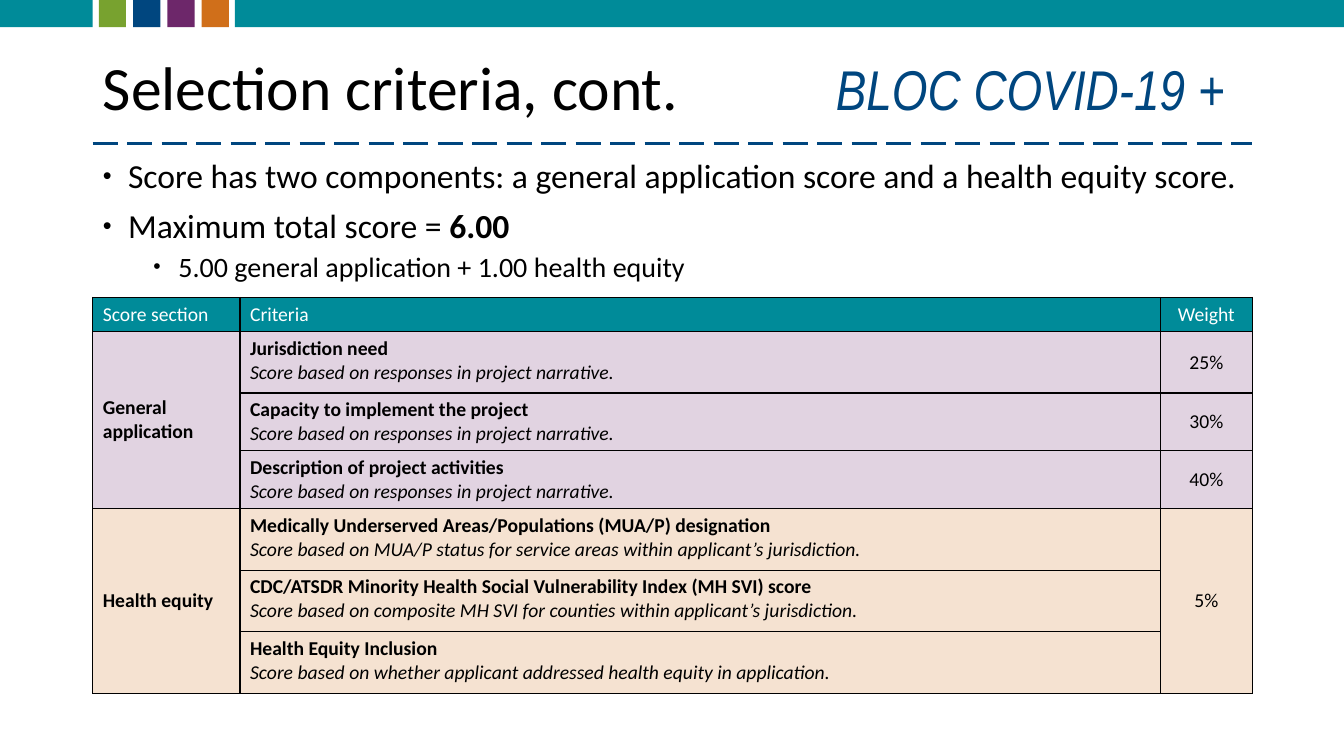
from lxml.etree import SubElement
from pptx import Presentation
from pptx.dml.color import RGBColor
from pptx.enum.dml import MSO_LINE
from pptx.enum.shapes import MSO_CONNECTOR, MSO_SHAPE
from pptx.enum.text import MSO_ANCHOR, MSO_AUTO_SIZE, PP_ALIGN
from pptx.oxml import parse_xml
from pptx.oxml.ns import nsdecls, qn
from pptx.util import Inches, Pt

TEAL = RGBColor(0x00, 0x8B, 0x99)
GREEN = RGBColor(0x78, 0xA2, 0x2F)
NAVY = RGBColor(0x00, 0x46, 0x7F)
PURPLE = RGBColor(0x6D, 0x27, 0x6A)
ORANGE = RGBColor(0xD0, 0x6F, 0x1A)
BLACK = RGBColor(0x00, 0x00, 0x00)
WHITE = RGBColor(0xFF, 0xFF, 0xFF)

LEFT, WIDTH = 0.92, 11.5
NARRATIVE = "Score based on responses in project narrative."
SECTIONS = [
    ("General application", PURPLE, [
        ("Jurisdiction need", NARRATIVE, "25%"),
        ("Capacity to implement the project", NARRATIVE, "30%"),
        ("Description of project activities", NARRATIVE, "40%"),
    ]),
    ("Health equity", ORANGE, [
        ("Medically Underserved Areas/Populations (MUA/P) designation",
         "Score based on MUA/P status for service areas within applicant’s jurisdiction.", "5%"),
        ("CDC/ATSDR Minority Health Social Vulnerability Index (MH SVI) score",
         "Score based on composite MH SVI for counties within applicant’s jurisdiction.", None),
        ("Health Equity Inclusion",
         "Score based on whether applicant addressed health equity in application.", None),
    ]),
]


class CriteriaSlide:
    font = "Calibri"
    table_size = 14

    def __init__(self, deck):
        self.slide = deck.slides.add_slide(deck.slide_layouts[1])
        self.shapes = self.slide.shapes

    def style(self, run, size, color=BLACK, bold=False, italic=False, font=None):
        run.font.name = font or self.font
        run.font.size = Pt(size)
        run.font.color.rgb = color
        run.font.bold = bold
        run.font.italic = italic

    def place(self, holder, top, height, anchor):
        holder.left, holder.top = Inches(LEFT), Inches(top)
        holder.width, holder.height = Inches(WIDTH), Inches(height)
        frame = holder.text_frame
        frame.word_wrap = True
        frame.auto_size = MSO_AUTO_SIZE.NONE
        frame.vertical_anchor = anchor
        return frame

    def band(self, left, width, color):
        block = self.shapes.add_shape(
            MSO_SHAPE.RECTANGLE, Inches(left), 0, Inches(width), Inches(0.27))
        block.shadow.inherit = False
        block.fill.solid()
        block.fill.fore_color.rgb = color
        block.line.fill.background()

    def title(self, heading, program):
        frame = self.place(self.shapes.title, 0.4, 1, MSO_ANCHOR.MIDDLE)
        line = frame.paragraphs[0]
        line.text = heading + "\t"
        line.alignment = PP_ALIGN.LEFT
        line.line_spacing = 0.9
        tabs = SubElement(line._p.get_or_add_pPr(), qn("a:tabLst"))
        SubElement(tabs, qn("a:tab"), pos=str(Inches(7.27)), algn="l")
        self.style(line.runs[0], 44)
        program_run = line.add_run()
        program_run.text = program
        self.style(program_run, 40, NAVY, italic=True, font="Arial Narrow")

    def bullets(self, items):
        frame = self.place(self.slide.placeholders[1], 1.53, 5.23, MSO_ANCHOR.TOP)
        for index, (level, text, strong) in enumerate(items):
            point = frame.add_paragraph() if index else frame.paragraphs[0]
            point.text = text
            point.level = level
            point.line_spacing = 0.9
            point.space_before = Pt((5 if level else 10) if index else 0)
            props = point._p.get_or_add_pPr()
            props.set("marL", str(Inches(0.25 + 0.5 * level)))
            props.set("indent", str(Inches(-0.25)))
            SubElement(props, qn("a:buSzPct"), val="75000")
            SubElement(props, qn("a:buFont"), typeface="Arial")
            SubElement(props, qn("a:buChar"), char="•")
            size = 20 if level else 24
            self.style(point.runs[0], size)
            if strong:
                total = point.add_run()
                total.text = strong
                self.style(total, size, bold=True)

    def divider(self, top):
        rule = self.shapes.add_connector(
            MSO_CONNECTOR.STRAIGHT, Inches(LEFT), Inches(top),
            Inches(LEFT + WIDTH), Inches(top))
        rule.line.color.rgb = NAVY
        rule.line.width = Pt(2.25)
        rule.line.dash_style = MSO_LINE.LONG_DASH
        SubElement(rule._element.spPr, qn("a:effectLst"))

    def paint(self, cell, color, alpha=None):
        cell.fill.solid()
        cell.fill.fore_color.rgb = color
        props = cell._tc.get_or_add_tcPr()
        if alpha:
            SubElement(props.find(".//" + qn("a:srgbClr")), qn("a:alpha"), val=str(alpha * 1000))
        for index, side in enumerate(("lnL", "lnR", "lnT", "lnB")):
            props.insert(index, parse_xml(
                f'<a:{side} {nsdecls("a")} w="12700"><a:solidFill>'
                f'<a:srgbClr val="{BLACK}"/></a:solidFill></a:{side}>'))

    def label(self, cell, text, color=BLACK, bold=False, centered=False, anchor=MSO_ANCHOR.MIDDLE):
        cell.text_frame.text = text
        cell.vertical_anchor = anchor
        for line in cell.text_frame.paragraphs:
            line.alignment = PP_ALIGN.CENTER if centered else PP_ALIGN.LEFT
            for run in line.runs:
                self.style(run, self.table_size, color, bold)

    def table(self, headings, sections):
        widths = (1.46, 9.13, 0.91)
        heights = (0.34, 0.61, 0.57, 0.57, 0.61, 0.61, 0.61)
        grid = self.shapes.add_table(
            len(heights), len(widths), Inches(LEFT), Inches(2.95),
            Inches(WIDTH), Inches(sum(heights))).table
        grid.first_row = grid.horz_banding = False
        for column, width in zip(grid.columns, widths):
            column.width = Inches(width)
        for row, height in zip(grid.rows, heights):
            row.height = Inches(height)
        for column, heading in enumerate(headings):
            self.paint(grid.cell(0, column), TEAL)
            self.label(grid.cell(0, column), heading, WHITE,
                       centered=heading == "Weight", anchor=MSO_ANCHOR.TOP)
        start = 1
        for section, color, criteria in sections:
            end = start + len(criteria) - 1
            for row, (name, basis, weight) in enumerate(criteria, start):
                for column in range(len(widths)):
                    self.paint(grid.cell(row, column), color, 20)
                criterion = grid.cell(row, 1)
                self.label(criterion, f"{name}\n{basis}", bold=True, anchor=MSO_ANCHOR.TOP)
                basis_font = criterion.text_frame.paragraphs[1].runs[0].font
                basis_font.bold, basis_font.italic = False, True
                if weight:
                    self.label(grid.cell(row, 2), weight, centered=True)
            self.label(grid.cell(start, 0), section, bold=True)
            grid.cell(start, 0).merge(grid.cell(end, 0))
            if criteria[-1][2] is None:
                grid.cell(start, 2).merge(grid.cell(end, 2))
            start = end + 1


def main():
    deck = Presentation()
    deck.slide_width, deck.slide_height = Inches(13.33), Inches(7.5)
    page = CriteriaSlide(deck)
    page.band(0, LEFT, TEAL)
    for index, color in enumerate((GREEN, NAVY, PURPLE, ORANGE)):
        page.band(0.98 + 0.34 * index, 0.27, color)
    page.band(2.33, 11, TEAL)
    page.title("Selection criteria, cont.", "BLOC COVID-19 +")
    page.bullets([
        (0, "Score has two components: a general application score and a health equity score.", None),
        (0, "Maximum total score = ", "6.00"),
        (1, "5.00 general application + 1.00 health equity", None),
    ])
    page.table(("Score section", "Criteria", "Weight"), SECTIONS)
    page.divider(1.42)
    deck.save("out.pptx")


if __name__ == "__main__":
    main()
